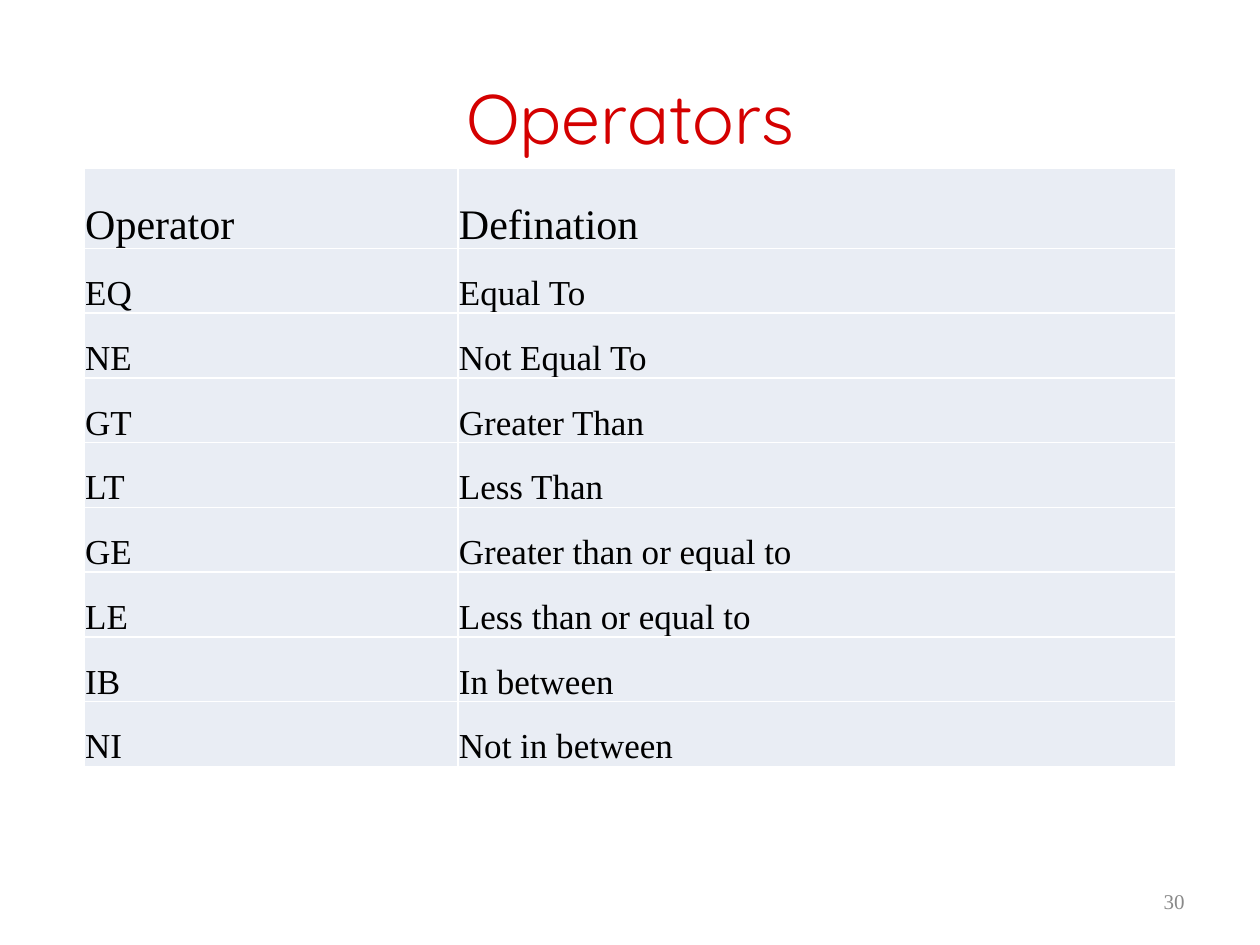
import pptx
import pptx.util
import pptx.dml.color
import pptx.enum.text
import pptx.oxml.ns
import lxml.etree

Pt = pptx.util.Pt
ALIGN = pptx.enum.text.PP_ALIGN
ANCHOR = pptx.enum.text.MSO_ANCHOR

COLORS = {
    "title": "D40000",
    "text": "000000",
    "cell": "E9EDF4",
    "border": "FFFFFF",
    "number": "898989",
}
BODY_FONT = "Times New Roman"
OPERATORS = [
    ("Operator", "Defination"),
    ("EQ", "Equal To"),
    ("NE", "Not Equal To"),
    ("GT", "Greater Than"),
    ("LT", "Less Than"),
    ("GE", "Greater than or equal to"),
    ("LE", "Less than or equal to"),
    ("IB", "In between"),
    ("NI", "Not in between"),
]
COLUMN_WIDTHS = (213.6, 410.4)
HEADER_HEIGHT, ROW_HEIGHT = 46, 37


def color(name):
    return pptx.dml.color.RGBColor.from_string(COLORS[name])


def write(text_frame, text, font_name, size, color_name, alignment=ALIGN.LEFT):
    text_frame.text = text
    paragraph = text_frame.paragraphs[0]
    paragraph.alignment = alignment
    font = paragraph.runs[0].font
    font.name, font.size = font_name, Pt(size)
    font.color.rgb = color(color_name)


def add_borders(cell, width=1):
    qn = pptx.oxml.ns.qn
    properties = cell._tc.get_or_add_tcPr()
    for side in ("a:lnL", "a:lnR", "a:lnT", "a:lnB"):
        line = lxml.etree.SubElement(properties, qn(side), w=str(Pt(width)))
        fill = lxml.etree.SubElement(line, qn("a:solidFill"))
        lxml.etree.SubElement(fill, qn("a:srgbClr"), val=COLORS["border"])


def add_title(slide, text):
    title = slide.shapes.title
    title.left, title.top = Pt(36), Pt(21.6)
    title.width, title.height = Pt(648), Pt(90)
    title.text_frame.vertical_anchor = ANCHOR.MIDDLE
    write(title.text_frame, text, "Quicksand", 40, "title", ALIGN.CENTER)


def format_cell(cell, text, size):
    cell.margin_left = cell.margin_right = cell.margin_top = Pt(0.7)
    cell.margin_bottom = 0
    cell.vertical_anchor = ANCHOR.BOTTOM
    add_borders(cell)
    cell.fill.solid()
    cell.fill.fore_color.rgb = color("cell")
    write(cell.text_frame, text, BODY_FONT, size, "text")


def add_operator_table(slide):
    height = HEADER_HEIGHT + ROW_HEIGHT * (len(OPERATORS) - 1)
    table = slide.shapes.add_table(
        len(OPERATORS), len(COLUMN_WIDTHS),
        Pt(48), Pt(96), Pt(sum(COLUMN_WIDTHS)), Pt(height)).table
    for column, width in zip(table.columns, COLUMN_WIDTHS):
        column.width = Pt(width)
    for index, entry in enumerate(OPERATORS):
        is_header = index == 0
        table.rows[index].height = Pt(HEADER_HEIGHT if is_header else ROW_HEIGHT)
        for column_index, text in enumerate(entry):
            format_cell(table.cell(index, column_index), text,
                        24 if is_header else 20)


def add_slide_number(slide, number):
    box = slide.shapes.add_textbox(Pt(516), Pt(500.5), Pt(168), Pt(28.75))
    box.text_frame.word_wrap = True
    box.text_frame.vertical_anchor = ANCHOR.MIDDLE
    write(box.text_frame, number, BODY_FONT, 12, "number", ALIGN.RIGHT)


def main():
    presentation = pptx.Presentation()
    presentation.slide_width, presentation.slide_height = Pt(720), Pt(540)
    # Title Only layout
    slide = presentation.slides.add_slide(presentation.slide_layouts[5])
    add_title(slide, "Operators")
    add_operator_table(slide)
    add_slide_number(slide, "30")
    presentation.save("out.pptx")


if __name__ == "__main__":
    main()
